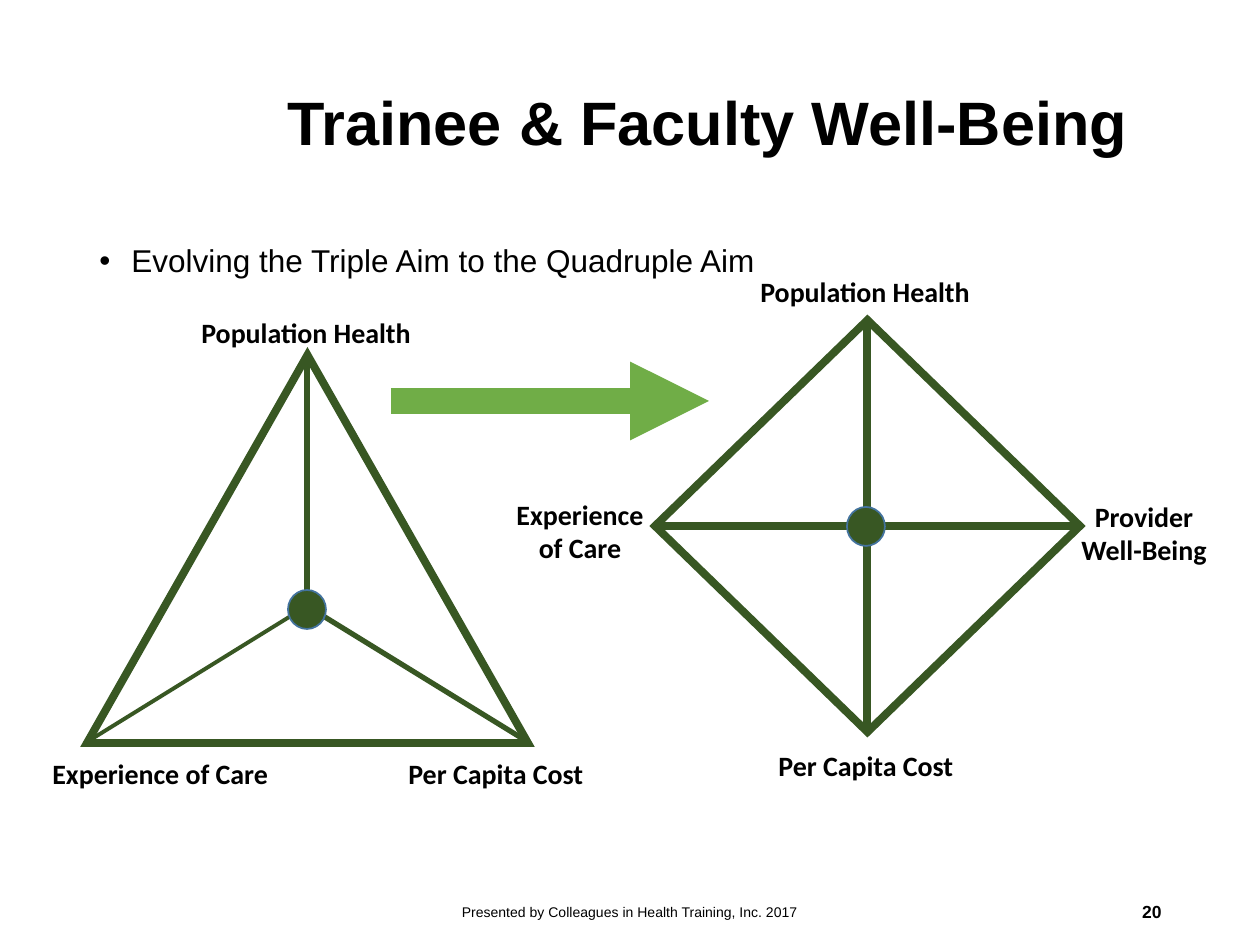
from lxml import etree
from pptx import Presentation
from pptx.dml.color import RGBColor
from pptx.enum.shapes import MSO_CONNECTOR, MSO_SHAPE
from pptx.enum.text import MSO_ANCHOR, MSO_AUTO_SIZE, PP_ALIGN
from pptx.oxml.ns import qn
from pptx.util import Emu, Pt

STRAIGHT = MSO_CONNECTOR.STRAIGHT
DIAMOND, TRIANGLE, OVAL = MSO_SHAPE.DIAMOND, MSO_SHAPE.ISOSCELES_TRIANGLE, MSO_SHAPE.OVAL
TOP, MIDDLE = MSO_ANCHOR.TOP, MSO_ANCHOR.MIDDLE
LEFT, CENTER, RIGHT = PP_ALIGN.LEFT, PP_ALIGN.CENTER, PP_ALIGN.RIGHT
FIT_SHAPE, NO_FIT = MSO_AUTO_SIZE.SHAPE_TO_FIT_TEXT, MSO_AUTO_SIZE.NONE

BLACK = RGBColor(0x00, 0x00, 0x00)
DARK_GREEN = RGBColor(0x38, 0x57, 0x23)
GREEN = RGBColor(0x70, 0xAD, 0x47)
BLUE = RGBColor(0x43, 0x73, 0x9E)
PX = 914400 / 126


def px(*lengths):
    return [Emu(round(length * PX)) for length in lengths]


def write(text, at, box=None, size=16, font="Calibri", bold=False, align=LEFT,
          anchor=TOP, wrap=True, fit=NO_FIT, spacing=None, bullet=False):
    if box is None:
        box = page.shapes.add_textbox(*px(*at))
    else:
        box.left, box.top, box.width, box.height = px(*at)
    frame = box.text_frame
    frame.text = text
    frame.word_wrap = wrap
    frame.auto_size = fit
    frame.vertical_anchor = anchor
    for para in frame.paragraphs:
        if bullet:
            properties = para._p.get_or_add_pPr()
            indent = px(32)[0]
            properties.set("marL", str(indent))
            properties.set("indent", str(-indent))
            etree.SubElement(properties, qn("a:buFont"), typeface="Arial")
            etree.SubElement(properties, qn("a:buChar"), char="•")
        para.alignment = align
        para.line_spacing = spacing
        for span in para.runs:
            span.font.size = Pt(size)
            span.font.name = font
            span.font.bold = bold
            span.font.color.rgb = BLACK


deck = Presentation()
deck.slide_width, deck.slide_height = px(1260, 945)
page = deck.slides.add_slide(deck.slide_layouts[5])

write("Evolving the Triple Aim to the Quadruple Aim", (87, 239, 1086, 611),
      size=18, font="Arial", spacing=0.9, bullet=True)
write("Trainee & Faculty Well-Being", (275, 34, 900, 183), box=page.shapes.title,
      size=35, font="Arial", bold=True, anchor=MIDDLE, spacing=0.9)
write("Presented by Colleagues in Health Training, Inc. 2017", (417, 887, 426, 50),
      size=8, font="Arial", align=CENTER, anchor=MIDDLE)
write("20", (890, 887, 284, 50), size=10, font="Arial", bold=True,
      align=RIGHT, anchor=MIDDLE)

aims = [
    (DIAMOND, (655, 320, 425, 412), (866, 526),
     [(867, 320, 867, 732, 4.5), (655, 526, 1080, 526, 4.5)]),
    (TRIANGLE, (87, 355, 441, 388), (307, 609),
     [(307, 355, 307, 606, 3), (307, 606, 87, 742, 2.25), (307, 606, 528, 742, 3)]),
]
lines = []
for kind, at, (hub_x, hub_y), spokes in aims:
    outline = page.shapes.add_shape(kind, *px(*at))
    outline.shadow.inherit = False
    outline.fill.background()
    outline.line.color.rgb = DARK_GREEN
    outline.line.width = Pt(4.5)
    etree.SubElement(outline.line._get_or_add_ln(), qn("a:miter"), lim="800000")

    for *ends, width in spokes:
        spoke = page.shapes.add_connector(STRAIGHT, *px(*ends))
        spoke.line.color.rgb = DARK_GREEN
        spoke.line.width = Pt(width)
        lines.append(spoke)

    hub = page.shapes.add_shape(OVAL, *px(hub_x - 19, hub_y - 19, 38, 39))
    hub.shadow.inherit = False
    hub.fill.solid()
    hub.fill.fore_color.rgb = DARK_GREEN
    hub.line.color.rgb = BLUE
    hub.line.width = Pt(1)

labels = [
    ("Population Health", (189, 309, 237, 47), LEFT),
    ("Per Capita Cost", (396, 750, 203, 47), LEFT),
    ("Experience of Care", (40, 750, 244, 47), LEFT),
    ("Per Capita Cost", (766, 742, 203, 47), LEFT),
    ("Experience\nof Care", (500, 491, 160, 81), CENTER),
    ("Population Health", (748, 268, 237, 47), LEFT),
    ("Provider\nWell-Being", (1068, 493, 152, 81), CENTER),
]
for text, at, align in labels:
    write(text, at, bold=True, align=align, wrap=False, fit=FIT_SHAPE)

arrow = page.shapes.add_connector(STRAIGHT, *px(391, 401, 709, 401))
arrow.line.color.rgb = GREEN
arrow.line.width = Pt(15)
etree.SubElement(arrow.line._get_or_add_ln(), qn("a:tailEnd"), type="triangle")
lines.append(arrow)

for line in lines:
    etree.SubElement(line._element.spPr, qn("a:effectLst"))

deck.save("out.pptx")
